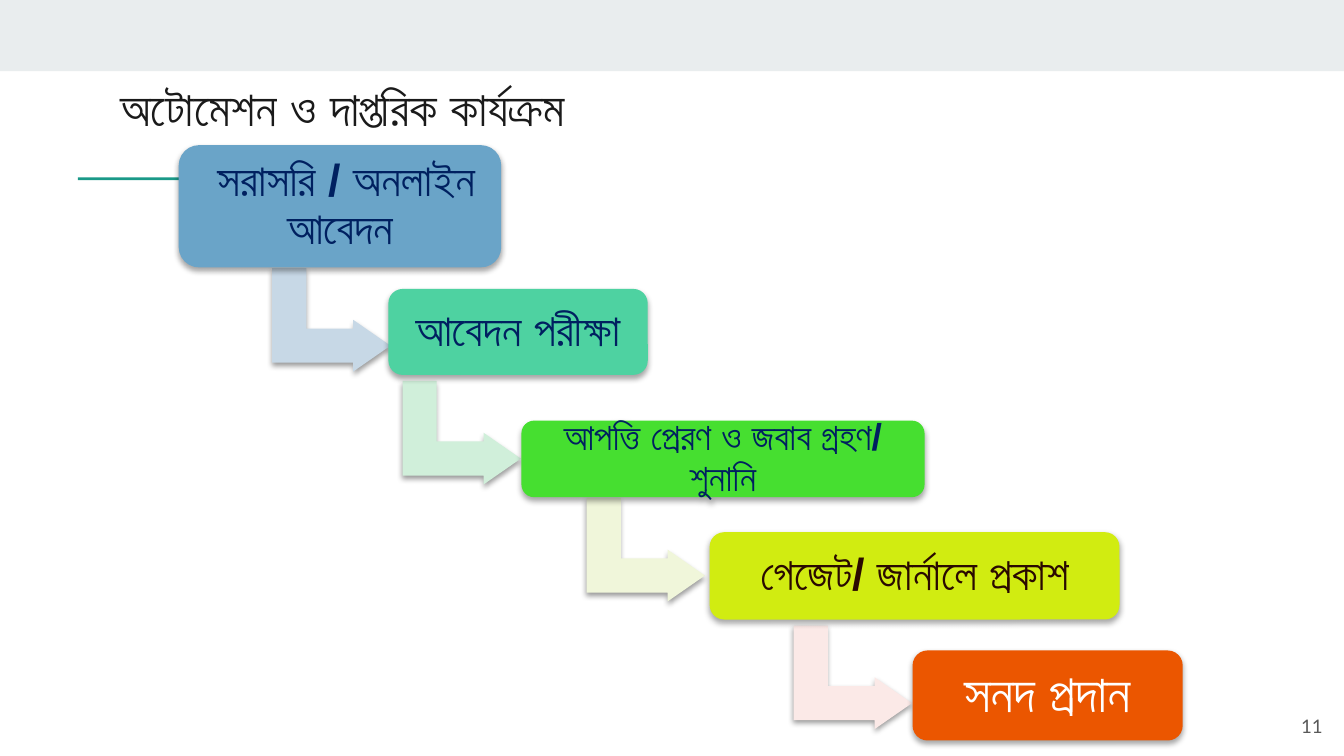
import pptx
import pptx.util
import pptx.dml.color
import pptx.enum.shapes
import pptx.enum.text
import pptx.oxml

Inches = pptx.util.Inches
RGBColor = pptx.dml.color.RGBColor
Shape = pptx.enum.shapes.MSO_SHAPE
Align = pptx.enum.text.PP_ALIGN
Anchor = pptx.enum.text.MSO_ANCHOR

WHITE = RGBColor(0xFF, 0xFF, 0xFF)
BAND = RGBColor(0xE9, 0xED, 0xEE)
TEAL = RGBColor(0x1A, 0x99, 0x88)
INK = RGBColor(0x1A, 0x1A, 0x1A)
GRAY = RGBColor(0x59, 0x59, 0x59)
NAVY = RGBColor(0x00, 0x20, 0x60)
BROWN = RGBColor(0x2A, 0x0A, 0x00)
BLUE = RGBColor(0x6A, 0xA4, 0xC8)
MINT = RGBColor(0x4E, 0xD2, 0xA1)
GREEN = RGBColor(0x46, 0xDF, 0x30)
LIME = RGBColor(0xD1, 0xEC, 0x11)
ORANGE = RGBColor(0xEB, 0x56, 0x00)
PALE_BLUE = RGBColor(0xC7, 0xD8, 0xE6)
PALE_MINT = RGBColor(0xD0, 0xEF, 0xDA)
PALE_LIME = RGBColor(0xF0, 0xF6, 0xDA)
PALE_PINK = RGBColor(0xFB, 0xE9, 0xE7)

# A 16:9 slide
deck = pptx.Presentation()
deck.slide_width = Inches(10)
deck.slide_height = Inches(10) * 9 // 16
slide = deck.slides.add_slide(deck.slide_layouts[6])


def add_block(kind, box, color, shade=None):
    """Add a filled shape; shade is (opacity %, distance in points)."""
    block = slide.shapes.add_shape(kind, *[Inches(n) for n in box])
    block.fill.solid()
    block.fill.fore_color.rgb = color
    block.line.fill.background()
    block.shadow.inherit = False
    if shade:
        alpha, gap = shade
        effects = block._element.spPr.find(pptx.oxml.ns.qn("a:effectLst"))
        effects.append(pptx.oxml.parse_xml(
            f'<a:outerShdw {pptx.oxml.ns.nsdecls("a")} blurRad="{pptx.util.Pt(3.1)}" '
            f'dist="{pptx.util.Pt(gap)}" dir="5400000" rotWithShape="0">'
            f'<a:srgbClr val="000000"><a:alpha val="{alpha * 1000}"/></a:srgbClr>'
            '</a:outerShdw>'))
    return block


def set_text(shape, text, size, color, align, anchor, font="Arial", bold=True, inset=0.1):
    frame = shape.text_frame
    frame.word_wrap = True
    frame.vertical_anchor = anchor
    frame.margin_left = frame.margin_right = Inches(inset)
    frame.margin_top = frame.margin_bottom = Inches(inset)
    para = frame.paragraphs[0]
    para.text = text
    para.alignment = align
    para.font.size = pptx.util.Pt(size)
    para.font.name = font
    para.font.bold = bold
    para.font.color.rgb = color
    return para


# Top band and accent line
add_block(Shape.RECTANGLE, (0, 0, 10, 0.53), BAND)
add_block(Shape.RECTANGLE, (0.58, 1.32, 0.82, 0.02), TEAL)

# Title
title = slide.shapes.add_textbox(Inches(0.8), Inches(0.48), Inches(8.41), Inches(0.59))
set_text(title, "অটোমেশন ও দাপ্তরিক কার্যক্রম", 26, INK, Align.LEFT, Anchor.TOP)

# Steps: text, box, fill, text size, text color, inset, arrow place, arrow fill
steps = [
    (" সরাসরি / অনলাইন আবেদন", (1.33, 1.08, 2.4, 0.91), BLUE, 24, NAVY, 0.1,
     (2.08, 1.94), PALE_BLUE),
    ("আবেদন পরীক্ষা", (2.89, 2.15, 1.93, 0.64), MINT, 24, NAVY, 0.1,
     (3.05, 2.78), PALE_MINT),
    ("আপত্তি প্রেরণ ও জবাব গ্রহণ/ শুনানি", (3.88, 3.13, 3, 0.57), GREEN, 20, NAVY, 0.08,
     (4.42, 3.65), PALE_LIME),
    ("গেজেট/ জার্নালে প্রকাশ", (5.28, 3.96, 3.05, 0.65), LIME, 24, BROWN, 0.1,
     (5.96, 4.6), PALE_PINK),
    ("সনদ প্রদান", (6.79, 4.84, 2.01, 0.67), ORANGE, 28, WHITE, 0.12, None, None),
]
for text, box, fill, size, color, inset, place, pale in steps:
    if place:
        arrow = add_block(Shape.BENT_UP_ARROW, (*place, 0.77, 0.88), pale, (38, 1.6))
        arrow.rotation = 90
        for i, value in enumerate((0.33, 0.25, 0.36)):
            arrow.adjustments[i] = value
    step = add_block(Shape.ROUNDED_RECTANGLE, box, fill, (35, 1.8))
    para = set_text(step, text, size, color, Align.CENTER, Anchor.MIDDLE, inset=inset)
    para.line_spacing = 0.9

# Slide number
number = slide.shapes.add_textbox(Inches(9.34), Inches(5.19), Inches(0.6), Inches(0.43))
set_text(number, "11", 10, GRAY, Align.RIGHT, Anchor.MIDDLE, "Lato", False)

deck.save("out.pptx")
